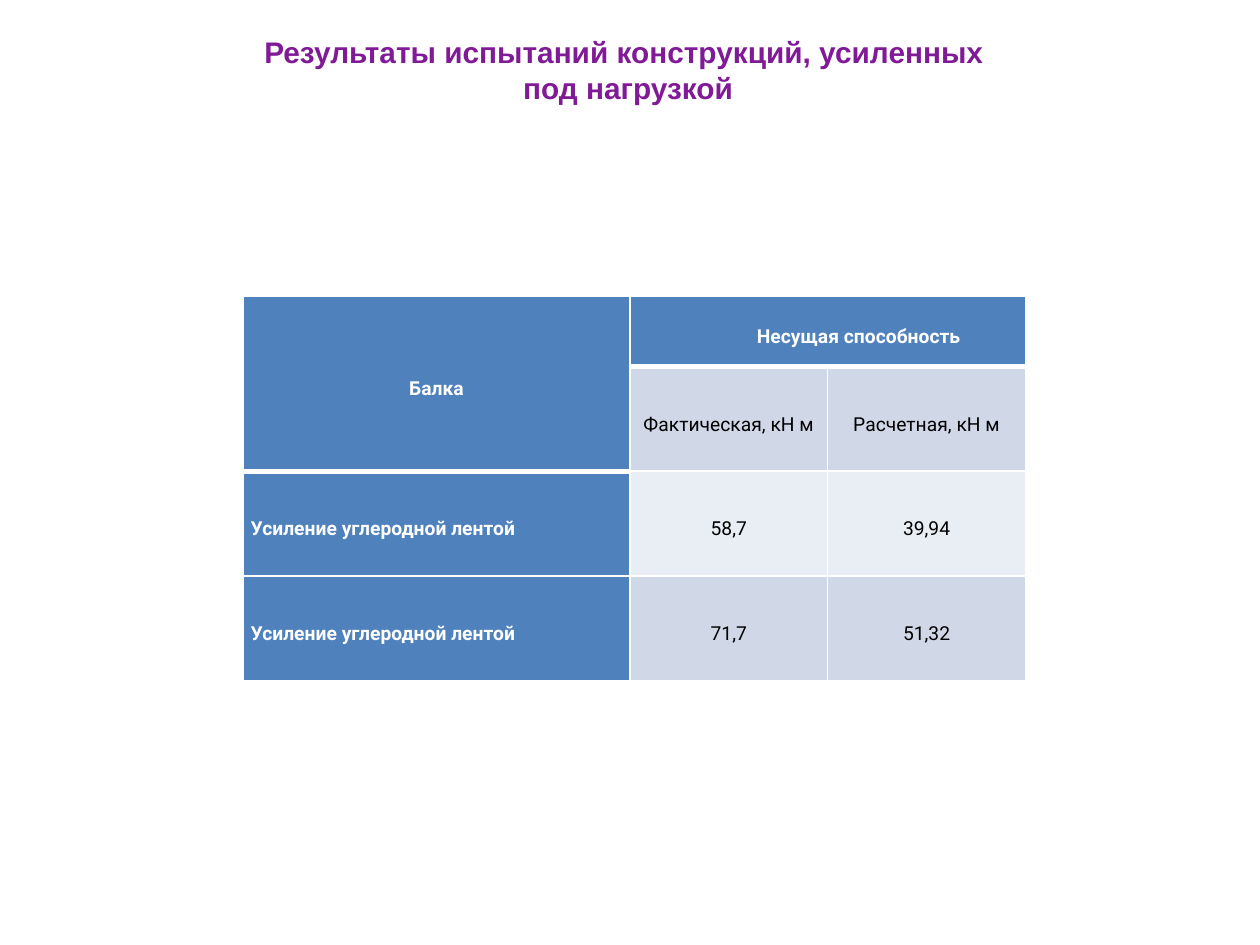
from lxml.etree import SubElement as Sub
from pptx import Presentation
from pptx.dml.color import RGBColor as Rgb
from pptx.enum.text import MSO_ANCHOR as Anchor, PP_ALIGN as Align
from pptx.oxml.ns import qn
from pptx.util import Inches as In, Pt

HUES = {"title": "801A96", "head": "4F81BD", "odd": "D0D8E8",
        "even": "E9EDF4", "white": "FFFFFF", "black": "000000"}
COLS = [3.07, 1.57, 1.57]
ROWS = [0.56] + [0.83] * 3
DATA = [
    ["Балка", "Несущая способность", ""],
    ["", "Фактическая, кН м", "Расчетная, кН м"],
    ["Усиление углеродной лентой", "58,7", "39,94"],
    ["Усиление углеродной лентой", "71,7", "51,32"],
]


def write(frame, text, size=11, face="Roboto", hue="black", bold=False,
          align=Align.CENTER, space=1.5, indent=0):
    par = frame.paragraphs[0]
    par.text = text
    par.alignment = align
    par.line_spacing = space
    if indent:
        par._p.get_or_add_pPr().set("indent", str(In(indent)))
    for run in par.runs:
        font = run.font
        font.size, font.name, font.bold = Pt(size), face, bold
        font.color.rgb = Rgb.from_string(HUES[hue])


def edge(cell, side, width):
    line = Sub(cell._tc.get_or_add_tcPr(), qn("a:ln" + side), w=str(Pt(width)))
    fill = Sub(line, qn("a:solidFill"))
    Sub(fill, qn("a:srgbClr"), val=HUES["white"])


deck = Presentation()
deck.slide_width, deck.slide_height = In(10), In(7.5)
slide = deck.slides.add_slide(deck.slide_layouts[6])

title = slide.shapes.add_textbox(In(0.34), In(0.21), In(9.29), In(0.69)).text_frame
title.word_wrap = True
title.vertical_anchor = Anchor.MIDDLE
write(title, "Результаты испытаний конструкций, усиленных \vпод нагрузкой",
      size=17, face="Arial", hue="title", bold=True, space=1)

table = slide.shapes.add_table(len(ROWS), len(COLS), In(1.93), In(2.35),
                               In(sum(COLS)), In(sum(ROWS))).table
for col, width in zip(table.columns, COLS):
    col.width = In(width)
for row, height in zip(table.rows, ROWS):
    row.height = In(height)
table.cell(0, 0).merge(table.cell(1, 0))
table.cell(0, 1).merge(table.cell(0, 2))

for r, line in enumerate(DATA):
    for c, text in enumerate(line):
        cell = table.cell(r, c)
        head = r == 0 or c == 0
        thick = r == 0 or (r == 1 and c == 0)
        above = (r == 1 and c > 0) or (r == 2 and c == 0)
        cell.margin_left = cell.margin_right = In(0.06)
        cell.margin_top = cell.margin_bottom = 0
        cell.vertical_anchor = Anchor.MIDDLE
        for side, width in zip("LRTB", [1, 1, 3 if above else 1, 3 if thick else 1]):
            edge(cell, side, width)
        cell.fill.solid()
        tone = "head" if head else "odd" if r % 2 else "even"
        cell.fill.fore_color.rgb = Rgb.from_string(HUES[tone])
        if text:
            write(cell.text_frame, text, hue="white" if head else "black", bold=head,
                  align=Align.JUSTIFY if c == 0 and r > 1 else Align.CENTER,
                  indent=0.49 if r == 0 and c == 1 else 0)

deck.save("out.pptx")
